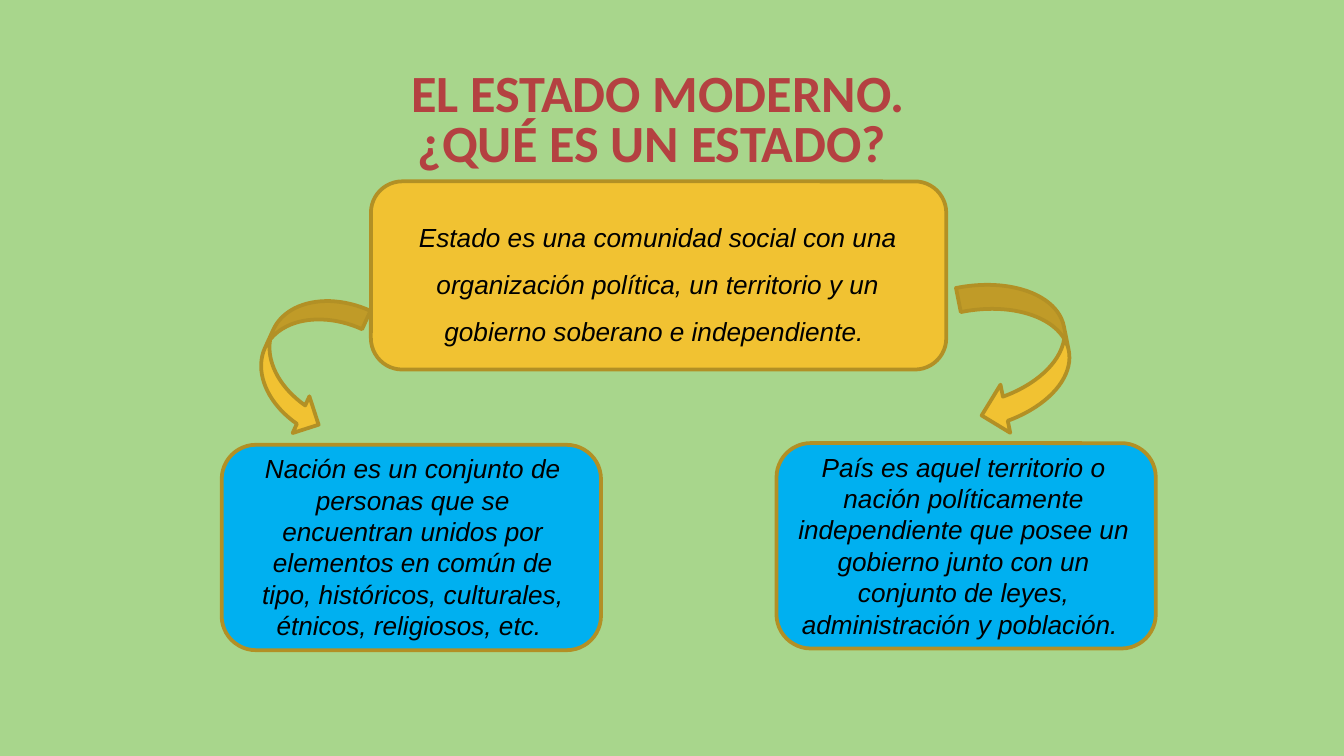
import pptx
import pptx.util
import pptx.dml.color
import pptx.enum.shapes
import pptx.enum.text

Pt = pptx.util.Pt
RGBColor = pptx.dml.color.RGBColor
SHAPE = pptx.enum.shapes.MSO_SHAPE
ANCHOR = pptx.enum.text.MSO_ANCHOR
ALIGN = pptx.enum.text.PP_ALIGN
FIT = pptx.enum.text.MSO_AUTO_SIZE

GREEN = RGBColor(0xA8, 0xD6, 0x8C)
YELLOW = RGBColor(0xF1, 0xC2, 0x32)
OCHRE = RGBColor(0xB2, 0x90, 0x25)
BLUE = RGBColor(0x00, 0xB0, 0xF0)
RED = RGBColor(0xB4, 0x41, 0x41)
BLACK = RGBColor(0x00, 0x00, 0x00)


class Slide:
    title_font = {"name": "Calibri", "size": Pt(28), "bold": True}
    body_font = {"name": "Arial", "size": Pt(14), "italic": True}

    def __init__(self, prs):
        self.s = prs.slides.add_slide(prs.slide_layouts[5])
        fill = self.s.background.fill
        fill.solid()
        fill.fore_color.rgb = GREEN

    def set_text(self, tf, text, font, color, spacing):
        tf.word_wrap = True
        tf.vertical_anchor = ANCHOR.TOP
        p = tf.paragraphs[0]
        p.text = text
        p.alignment = ALIGN.CENTER
        p.line_spacing = spacing
        for r in p.runs:
            for key, value in font.items():
                setattr(r.font, key, value)
            r.font.color.rgb = color

    def title(self, box, text):
        sp = self.s.shapes.title
        for key, value in zip(("left", "top", "width", "height"), box):
            setattr(sp, key, Pt(value))
        tf = sp.text_frame
        for side in ("left", "top", "right", "bottom"):
            setattr(tf, f"margin_{side}", Pt(7.2))
        tf.auto_size = FIT.NONE
        self.set_text(tf, text, self.title_font, RED, 0.8)

    def shape(self, kind, box, color, rotation=0):
        sp = self.s.shapes.add_shape(kind, *map(Pt, box))
        sp.shadow.inherit = False
        sp.rotation = rotation
        sp.fill.solid()
        sp.fill.fore_color.rgb = color
        sp.line.color.rgb = OCHRE
        sp.line.width = Pt(2)

    def text(self, box, text, spacing=1.0):
        tf = self.s.shapes.add_textbox(*map(Pt, box)).text_frame
        self.set_text(tf, text, self.body_font, BLACK, spacing)
        tf.auto_size = FIT.SHAPE_TO_FIT_TEXT


def main():
    prs = pptx.Presentation()
    prs.slide_width, prs.slide_height = Pt(720), Pt(405)
    slide = Slide(prs)

    slide.shape(SHAPE.ROUNDED_RECTANGLE, (198.7, 97.2, 308.2, 100.8), YELLOW)
    slide.title((101.5, 31.7, 501.8, 65.5), "EL ESTADO MODERNO.\v¿QUÉ ES UN ESTADO? ")
    slide.text(
        (211.7, 106.6, 281.5, 83.5),
        "Estado es una comunidad social con una organización política, "
        "un territorio y un gobierno soberano e independiente. ",
        spacing=1.5,
    )

    concepts = [
        (118.8, 238.3, 131.8, 178.6,
         "Nación es un conjunto de personas que se encuentran unidos por elementos "
         "en común de tipo, históricos, culturales, étnicos, religiosos, etc. "),
        (416, 237.4, 420.5, 191.5,
         "País es aquel territorio o nación políticamente independiente que posee un "
         "gobierno junto con un conjunto de leyes, administración y población. "),
    ]
    for left, top, text_left, text_width, text in concepts:
        slide.shape(SHAPE.ROUNDED_RECTANGLE, (left, top, 203.2, 110), BLUE)
        slide.text((text_left, top + 0.7, text_width, 108.7), text)

    slide.shape(SHAPE.CURVED_RIGHT_ARROW, (141.1, 154.1, 43.2, 77.8), YELLOW, 24.5)
    slide.shape(SHAPE.CURVED_LEFT_ARROW, (519.8, 148.3, 52.6, 82.8), YELLOW, 348.6)

    prs.save("out.pptx")


if __name__ == "__main__":
    main()
